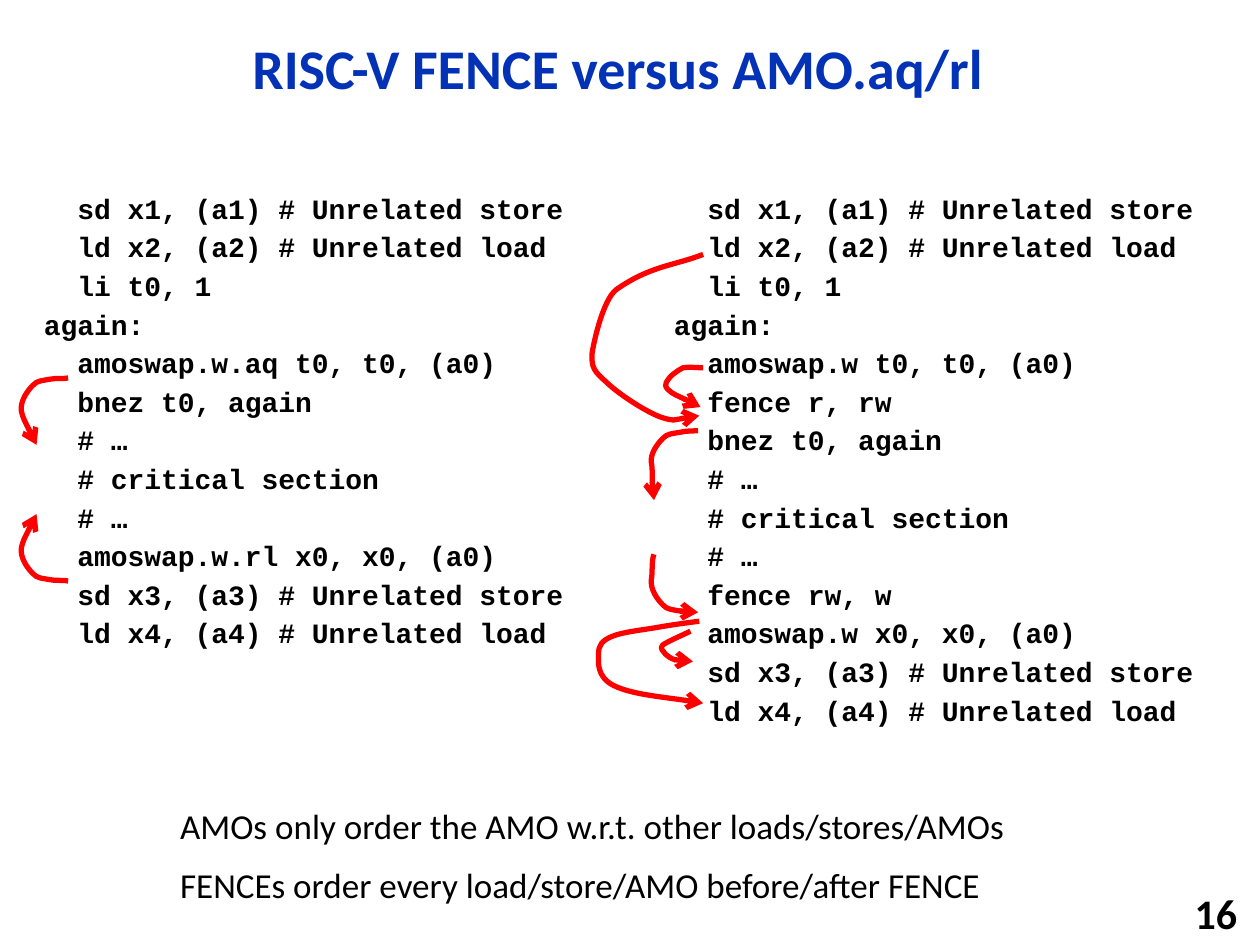
from dataclasses import dataclass

from lxml.etree import SubElement
from pptx import Presentation
from pptx.dml.color import RGBColor
from pptx.enum.text import MSO_ANCHOR as Anchor, PP_ALIGN as Align
from pptx.oxml.ns import qn
from pptx.util import Pt


@dataclass(frozen=True)
class Theme:
    heading: RGBColor = RGBColor(0x03, 0x32, 0xB7)
    ink: RGBColor = RGBColor(0, 0, 0)
    arrow: RGBColor = RGBColor(0xFF, 0, 0)
    sans: str = "Calibri"
    mono: str = "Courier New"
    title_size: float = 32
    number_size: float = 24
    note_size: float = 20
    code_size: float = 16
    arrow_width: float = 3


THEME = Theme()

SETUP = [
    "  sd x1, (a1) # Unrelated store",
    "  ld x2, (a2) # Unrelated load",
    "  li t0, 1",
    "again:",
]
CRITICAL = ["  bnez t0, again", "  # …", "  # critical section", "  # …"]
FINISH = ["  sd x3, (a3) # Unrelated store", "  ld x4, (a4) # Unrelated load"]

AMO_CODE = [
    *SETUP, "  amoswap.w.aq t0, t0, (a0)",
    *CRITICAL, "  amoswap.w.rl x0, x0, (a0)", *FINISH,
]
FENCE_CODE = [
    *SETUP, "  amoswap.w t0, t0, (a0)", "  fence r, rw",
    *CRITICAL, "  fence rw, w", "  amoswap.w x0, x0, (a0)", *FINISH,
]
NOTES = [
    "AMOs only order the AMO w.r.t. other loads/stores/AMOs",
    "FENCEs order every load/store/AMO before/after FENCE",
]

# Each curve: a start point, then two control points and an end per segment.
ACQUIRE = [
    (38.9, 216), (36, 216.7), (31.7, 216), (28.8, 216.7),
    (25.2, 217.4), (20.9, 217.4), (18.7, 220.3),
    (15.8, 223.2), (11.5, 229), (12.2, 234.7),
    (13, 239), (18.7, 249.8), (20.9, 254.2),
]
RELEASE = [(x, 548 - y) for x, y in ACQUIRE]
SWAP_TO_FENCE = [
    (401.8, 210.2), (399.6, 210.2), (393.1, 209.5), (390.2, 210.2),
    (387.4, 211.7), (384.5, 213.8), (383, 215.3),
    (381.6, 217.4), (378.7, 219.6), (381.6, 222.5),
    (384.5, 225.4), (396.7, 230.4), (400.3, 232.6),
]
LOAD_TO_FENCE = [
    (401.8, 145.4), (385.2, 151.9), (371.5, 151.9), (352.1, 165.6),
    (344.9, 171.4), (339.8, 193), (338.4, 201.6),
    (337.7, 210.2), (339.8, 212.4), (346.3, 218.2),
    (352.8, 224.6), (367.9, 234.7), (377.3, 238.3),
    (385.9, 241.2), (398.2, 237.6), (399.6, 237.6),
]
FENCE_TO_SECTION = [
    (398.9, 246.2), (396.7, 246.2), (391.7, 246.2), (388.8, 247),
    (385.2, 247.7), (380.9, 247.7), (378.7, 250.6),
    (375.8, 253.4), (371.5, 259.2), (372.2, 264.2),
    (373, 268.6), (372.2, 281.5), (373.7, 285.8),
]
SECTION_TO_FENCE = [
    (373.7, 316.8), (372.2, 320.4), (373, 327.6), (372.2, 331.2),
    (371.5, 337), (375.8, 342.7), (378.7, 345.6),
    (380.9, 348.5), (385.2, 348.5), (388.8, 349.2),
    (391.7, 349.9), (396.7, 349.2), (398.9, 349.9),
]
FENCE_TO_STORE = [
    (394.6, 360.7), (391.7, 362.2), (381.6, 366.5), (378.7, 368.6),
    (376.6, 370.8), (379.4, 372.2), (380.2, 373.7),
    (381.6, 375.1), (383.8, 376.6), (386.6, 377.3),
    (388.8, 378), (393.8, 378), (396, 378),
]
FENCE_TO_LOAD = [
    (399.6, 355), (398.9, 355), (383, 357.1), (375.1, 358.6),
    (366.5, 360), (354.9, 361.4), (349.9, 363.6),
    (344.2, 365.8), (342, 368.6), (342, 373.7),
    (342, 378), (340.6, 386.6), (350.6, 391.7),
    (360.7, 396.7), (385.2, 398.9), (401.8, 401.8),
]
ARROWS = [
    ACQUIRE, RELEASE, SWAP_TO_FENCE, LOAD_TO_FENCE,
    FENCE_TO_SECTION, SECTION_TO_FENCE, FENCE_TO_STORE, FENCE_TO_LOAD,
]


def write_lines(frame, lines, font, size, bold=False, color=THEME.ink,
                align=Align.LEFT, leading=1.0, gap=0):
    frame.word_wrap = True
    frame.text = "\n".join(lines)
    for para in frame.paragraphs:
        para.alignment = align
        para.line_spacing = leading
        para.space_before, para.space_after = Pt(0), Pt(gap)
        for span in para.runs:
            span.font.name = font
            span.font.size = Pt(size)
            span.font.bold = bold
            span.font.color.rgb = color


def set_title(page, text):
    title = page.shapes.title
    title.left, title.top = Pt(65.6), Pt(12)
    title.width, title.height = Pt(575), Pt(58)
    title.text_frame.vertical_anchor = Anchor.MIDDLE
    write_lines(title.text_frame, [text], THEME.sans, THEME.title_size,
                bold=True, color=THEME.heading, align=Align.CENTER, leading=0.9)


def add_text(page, left, top, width, height, lines, font, size, **style):
    box = page.shapes.add_textbox(Pt(left), Pt(top), Pt(width), Pt(height))
    write_lines(box.text_frame, lines, font, size, **style)
    return box


def add_code(page, left, lines):
    add_text(page, left, 108, 324, 300, lines, THEME.mono, THEME.code_size,
             bold=True, leading=0.9, gap=4.8)


def bend_segments(shape):
    """Turn each three straight segments into one cubic Bézier segment."""
    outline = next(shape.element.iter(qn("a:path")))
    straight = outline.findall(qn("a:lnTo"))
    for first in range(0, len(straight), 3):
        curve = SubElement(outline, qn("a:cubicBezTo"))
        for segment in straight[first:first + 3]:
            curve.append(segment[0])
            outline.remove(segment)


def add_curved_arrow(page, knots):
    start, *rest = [(Pt(x), Pt(y)) for x, y in knots]
    builder = page.shapes.build_freeform(*start)
    builder.add_line_segments(rest, close=False)
    arrow = builder.convert_to_shape()
    bend_segments(arrow)
    arrow.shadow.inherit = False
    arrow.fill.background()
    arrow.line.color.rgb = THEME.arrow
    arrow.line.width = Pt(THEME.arrow_width)
    stroke = arrow.element.spPr.find(qn("a:ln"))
    SubElement(stroke, qn("a:tailEnd"), type="arrow")


def main():
    deck = Presentation()
    deck.slide_width, deck.slide_height = Pt(720), Pt(540)
    page = deck.slides.add_slide(deck.slide_layouts.get_by_name("Title Only"))

    set_title(page, "RISC-V FENCE versus AMO.aq/rl")
    add_code(page, 18, AMO_CODE)
    add_code(page, 378, FENCE_CODE)
    for knots in ARROWS:
        add_curved_arrow(page, knots)
    add_text(page, 95.8, 456.3, 495, 68, NOTES, THEME.sans, THEME.note_size, gap=9.5)
    number = add_text(page, 564, 510, 150, 23, ["16"], THEME.sans,
                      THEME.number_size, bold=True, align=Align.RIGHT)
    number.text_frame.vertical_anchor = Anchor.MIDDLE

    deck.save("out.pptx")


if __name__ == "__main__":
    main()
